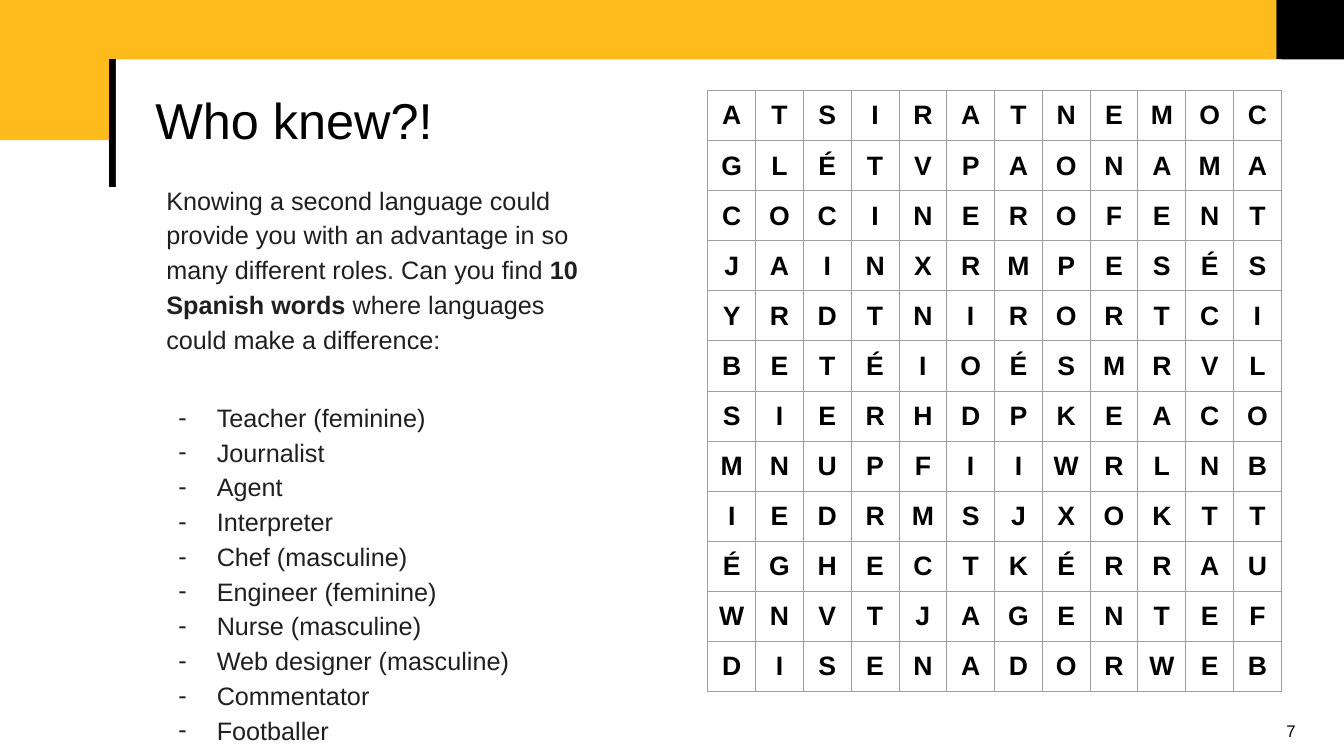
import lxml.etree
import pptx
import pptx.dml.color
import pptx.enum.shapes
import pptx.enum.text
import pptx.oxml.ns
import pptx.util

Inches = pptx.util.Inches
Pt = pptx.util.Pt
ANCHOR = pptx.enum.text.MSO_ANCHOR
ALIGN = pptx.enum.text.PP_ALIGN

LETTERS = """
ATSIRATNEMOC
GLÉTVPAONAMA
COCINEROFENT
JAINXRMPESÉS
YRDTNIRORTCI
BETÉIOÉSMRVL
SIERHDPKEACO
MNUPFIIWRLNB
IEDRMSJXOKTT
ÉGHECTKÉRRAU
WNVTJAGENTEF
DISENADORWEB
""".split()

INTRO = [
    ("Knowing a second language could provide you with an advantage "
     "in so many different roles. Can you find ", False),
    ("10 Spanish words", True),
    (" where languages could make a difference:", False),
]

ROLES = [
    "Teacher (feminine)", "Journalist", "Agent", "Interpreter",
    "Chef (masculine)", "Engineer (feminine)", "Nurse (masculine)",
    "Web designer (masculine)", "Commentator", "Footballer",
]


def colour(value):
    return pptx.dml.color.RGBColor.from_string(value)


def apply(target, values):
    for name, value in values.items():
        setattr(target, name, value)


def child(parent, tag, **attributes):
    return lxml.etree.SubElement(parent, pptx.oxml.ns.qn(tag), attributes)


def place(shape, left, top, width, height):
    apply(shape, {"left": Inches(left), "top": Inches(top),
                  "width": Inches(width), "height": Inches(height)})


def set_insets(target, left, top, right, bottom):
    apply(target, {"margin_left": Inches(left), "margin_top": Inches(top),
                   "margin_right": Inches(right), "margin_bottom": Inches(bottom)})


def add_span(para, text, size, ink="000000", bold=False):
    span = para.add_run()
    span.text = text
    apply(span.font, {"name": "Arial", "size": Pt(size), "bold": bold})
    span.font.color.rgb = colour(ink)


def add_block(page, fill, left, top, width, height):
    block = page.shapes.add_shape(pptx.enum.shapes.MSO_SHAPE.RECTANGLE, 0, 0, 0, 0)
    place(block, left, top, width, height)
    block.shadow.inherit = False
    block.fill.solid()
    block.fill.fore_color.rgb = colour(fill)
    block.line.fill.background()


def add_rule(page, left, top, bottom):
    rule = page.shapes.add_connector(
        pptx.enum.shapes.MSO_CONNECTOR.STRAIGHT,
        Inches(left), Inches(top), Inches(left), Inches(bottom))
    rule.line.color.rgb = colour("000000")
    rule.line.width = Pt(5)
    child(rule._element.spPr, "a:effectLst")


def bring_forward(page, shape):
    page.shapes._spTree.append(shape._element)


def fill_title(page):
    title = page.shapes.title
    bring_forward(page, title)
    place(title, 1.15, 0.59, 11.56, 1.26)
    title.fill.solid()
    title.fill.fore_color.rgb = colour("FFFFFF")
    frame = title.text_frame
    set_insets(frame, 0.39, 0.05, 0.1, 0.05)
    apply(frame, {"vertical_anchor": ANCHOR.MIDDLE, "word_wrap": True,
                  "auto_size": pptx.enum.text.MSO_AUTO_SIZE.NONE})
    para = frame.paragraphs[0]
    apply(para, {"alignment": ALIGN.LEFT, "line_spacing": 0.9})
    add_span(para, "Who knew?!", 36)


def add_page_number(page, number):
    box = page.shapes.add_textbox(0, 0, 0, 0)
    place(box, 12.66, 7.1, 0.41, 0.4)
    box.text_frame.word_wrap = True
    add_span(box.text_frame.paragraphs[0], number, 12)


def add_borders(cell, ink, width):
    properties = cell._tc.get_or_add_tcPr()
    for tag in ("a:lnL", "a:lnR", "a:lnT", "a:lnB"):
        line = child(properties, tag, w=str(Pt(width)))
        child(child(line, "a:solidFill"), "a:srgbClr", val=ink)


def add_word_search(page, left, top, width, height):
    count = len(LETTERS)
    grid = page.shapes.add_table(count, count, Inches(left), Inches(top),
                                 Inches(width), Inches(height)).table
    apply(grid, {"first_row": False, "horz_banding": False})
    for column in grid.columns:
        column.width = Inches(width / count)
    for row, letters in zip(grid.rows, LETTERS):
        row.height = Inches(height / count)
        for cell, letter in zip(row.cells, letters):
            add_borders(cell, "9E9E9E", 0.75)
            cell.fill.background()
            set_insets(cell, 0.09, 0.09, 0.09, 0.09)
            cell.vertical_anchor = ANCHOR.MIDDLE
            para = cell.text_frame.paragraphs[0]
            para.alignment = ALIGN.CENTER
            add_span(para, letter, 19, bold=True)


def set_bullet(para, symbol, indent, hanging):
    properties = para._p.get_or_add_pPr()
    properties.set("marL", str(Inches(indent)))
    properties.set("indent", str(Inches(-hanging)))
    if symbol:
        child(child(properties, "a:buClr"), "a:srgbClr", val="1F1F1F")
        child(properties, "a:buFont", typeface="Arial")
        child(properties, "a:buChar", char=symbol)
    else:
        child(properties, "a:buNone")


def add_body_para(para, spans, space_before, symbol=None, indent=0, hanging=0):
    set_bullet(para, symbol, indent, hanging)
    apply(para, {"alignment": ALIGN.LEFT, "line_spacing": 1.15,
                 "space_before": Pt(space_before), "space_after": Pt(0)})
    for text, bold in spans:
        add_span(para, text, 18, "1F1F1F", bold)


def fill_body(page):
    body = page.placeholders[1]
    bring_forward(page, body)
    place(body, 1.55, 1.69, 4.5, 5.82)
    frame = body.text_frame
    set_insets(frame, 0.1, 0.1, 0.1, 0.1)
    apply(frame, {"word_wrap": True, "vertical_anchor": ANCHOR.TOP,
                  "auto_size": pptx.enum.text.MSO_AUTO_SIZE.NONE})
    add_body_para(frame.paragraphs[0], INTRO, 0)
    for index, role in enumerate(ROLES):
        add_body_para(frame.add_paragraph(), [(role, False)],
                      0 if index else 31, "-", 0.5, 0.38)


def main():
    deck = pptx.Presentation()
    apply(deck, {"slide_width": Inches(13.33), "slide_height": Inches(7.5)})
    page = deck.slides.add_slide(deck.slide_layouts[1])
    add_block(page, "FFBB1C", 0, 0, 12.66, 1.39)
    add_rule(page, 1.12, 0.59, 1.86)
    add_block(page, "000000", 12.66, 0, 0.67, 0.59)
    fill_title(page)
    add_page_number(page, "7")
    add_word_search(page, 7.02, 0.9, 5.69, 5.92)
    fill_body(page)
    deck.save("out.pptx")


if __name__ == "__main__":
    main()
